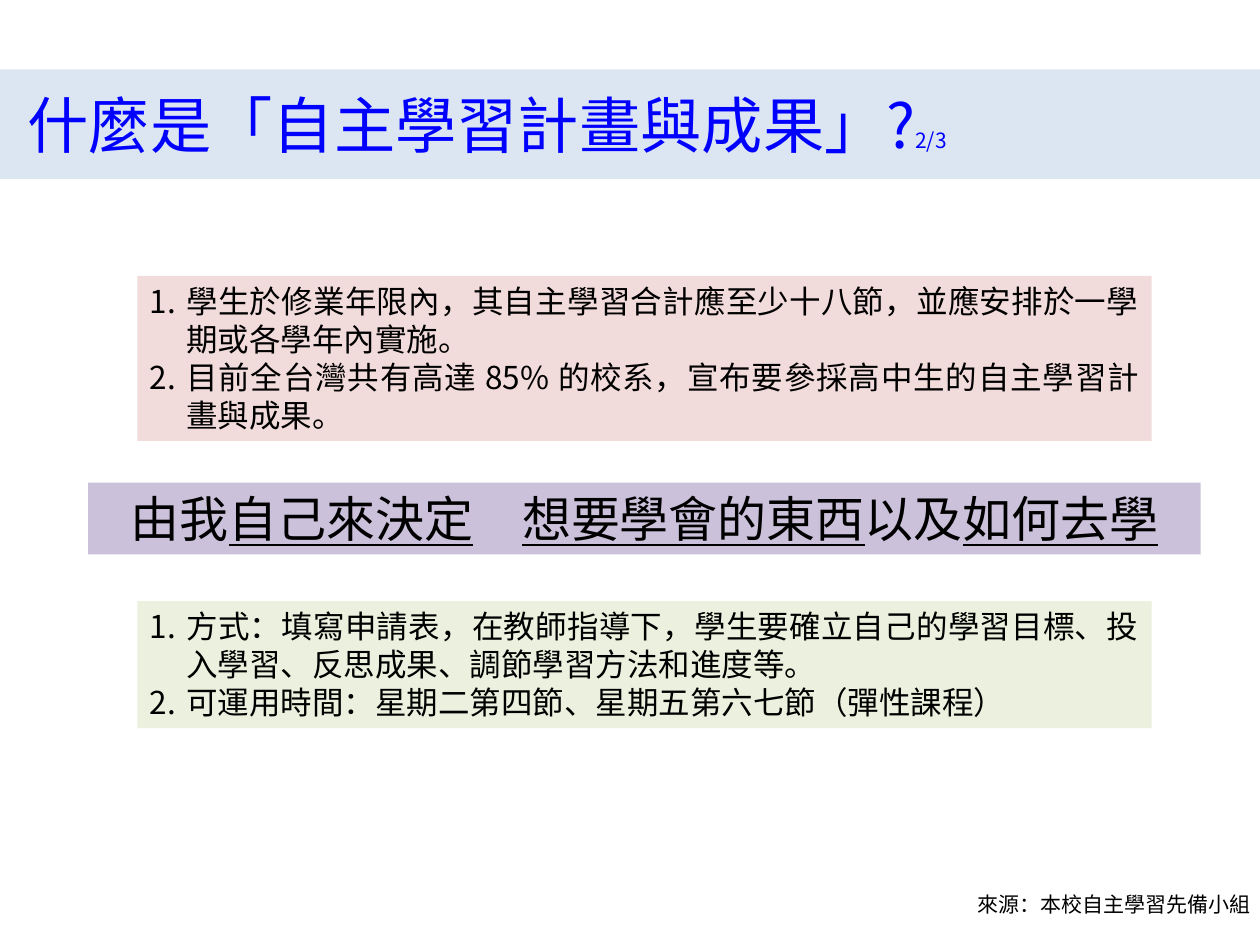
from dataclasses import dataclass

from lxml import etree
from pptx import Presentation
from pptx.dml.color import RGBColor
from pptx.enum.shapes import MSO_SHAPE
from pptx.enum.text import MSO_ANCHOR, PP_ALIGN
from pptx.oxml.ns import qn
from pptx.util import Inches, Pt

RECTANGLE = MSO_SHAPE.RECTANGLE
TOP, MIDDLE = MSO_ANCHOR.TOP, MSO_ANCHOR.MIDDLE
LEFT, CENTER, JUSTIFY = PP_ALIGN.LEFT, PP_ALIGN.CENTER, PP_ALIGN.JUSTIFY
SANS_SC, SANS_TC = "Noto Sans CJK SC", "Noto Sans CJK TC"
BLACK, BLUE = "000000", "0000FF"
LINE_FACTOR = 1.2
NUMBER_INDENT = Inches(0.29)


@dataclass(frozen=True)
class Piece:
    text: str
    size: float
    font: str = SANS_SC
    color: str = BLACK
    underline: bool = False


@dataclass(frozen=True)
class NumberedPanel:
    top: float
    height: float
    fill: str
    items: tuple[str, ...]


def rgb(color: str) -> RGBColor:
    return RGBColor.from_string(color)


def add_piece(paragraph, piece: Piece) -> None:
    run = paragraph.add_run()
    run.text = piece.text
    run.font.size = Pt(piece.size)
    run.font.name = piece.font
    run.font.color.rgb = rgb(piece.color)
    run.font.underline = piece.underline
    # East Asian glyphs take their own typeface entry
    latin = run.font._element.find(qn("a:latin"))
    east_asian = etree.Element(qn("a:ea"), typeface=piece.font)
    latin.addnext(east_asian)


def add_band(slide, left: float, top: float, width: float, height: float,
             fill: str, anchor=TOP):
    band = slide.shapes.add_shape(RECTANGLE, Inches(left), Inches(top),
                                  Inches(width), Inches(height))
    band.shadow.inherit = False
    band.fill.solid()
    band.fill.fore_color.rgb = rgb(fill)
    band.line.fill.background()
    band.text_frame.word_wrap = True
    band.text_frame.vertical_anchor = anchor
    return band.text_frame


def fill_line(paragraph, pieces: list[Piece], align) -> None:
    paragraph.alignment = align
    paragraph.line_spacing = Pt(pieces[0].size * LINE_FACTOR)
    for piece in pieces:
        add_piece(paragraph, piece)


def number(paragraph) -> None:
    properties = paragraph._p.get_or_add_pPr()
    properties.set("marL", str(NUMBER_INDENT))
    properties.set("indent", str(-NUMBER_INDENT))
    etree.SubElement(properties, qn("a:buFont"), typeface=SANS_SC)
    etree.SubElement(properties, qn("a:buAutoNum"), type="arabicPeriod")


def add_panel(slide, panel: NumberedPanel) -> None:
    frame = add_band(slide, 1.09, panel.top, 8.05, panel.height, panel.fill)
    for index, item in enumerate(panel.items):
        paragraph = frame.add_paragraph() if index else frame.paragraphs[0]
        fill_line(paragraph, [Piece(item, 18)], JUSTIFY)
        number(paragraph)


PANELS = (
    NumberedPanel(2.19, 1.31, "F2DCDB", (
        "學生於修業年限內，其自主學習合計應至少十八節，並應安排於一學期或各學年內實施。",
        "目前全台灣共有高達 85% 的校系，宣布要參採高中生的自主學習計畫與成果。",
    )),
    NumberedPanel(4.77, 1.01, "EBF1DE", (
        "方式：填寫申請表，在教師指導下，學生要確立自己的學習目標、投入學習、反思成果、調節學習方法和進度等。",
        "可運用時間：星期二第四節、星期五第六七節（彈性課程）",
    )),
)


def main() -> None:
    deck = Presentation()
    deck.slide_width, deck.slide_height = Inches(10), Inches(7.5)
    slide = deck.slides.add_slide(deck.slide_layouts[6])

    # Title band
    title = add_band(slide, 0, 0.55, 10, 0.87, "DCE6F2", MIDDLE)
    title.margin_left = Inches(0.22)
    title.margin_right = title.margin_top = title.margin_bottom = 0
    heading = title.paragraphs[0]
    heading.alignment = LEFT
    for text, font, size in (("什麼是", SANS_SC, 35), ("「", SANS_TC, 35),
                             ("自主學習計畫與成果", SANS_SC, 35),
                             ("」", SANS_TC, 35), ("?", SANS_SC, 35),
                             ("2/3", SANS_SC, 12)):
        add_piece(heading, Piece(text, size, font, BLUE))

    # Numbered panels
    for panel in PANELS:
        add_panel(slide, panel)

    # Key message
    message = add_band(slide, 0.7, 3.83, 8.83, 0.57, "CCC1DA")
    phrases = (("由我", False), ("自己來決定", True), ("\u3000", False),
               ("想要學會的東西", True), ("以及", False), ("如何去學", True))
    fill_line(message.paragraphs[0],
              [Piece(text, 28, underline=marked) for text, marked in phrases],
              CENTER)

    # Source note
    source = slide.shapes.add_textbox(Inches(7.66), Inches(7.03),
                                      Inches(2.66), Inches(0.3)).text_frame
    source.word_wrap = True
    fill_line(source.paragraphs[0],
              [Piece("來源：本校自主學習先備小組", 12)], LEFT)

    deck.save("out.pptx")


if __name__ == "__main__":
    main()
